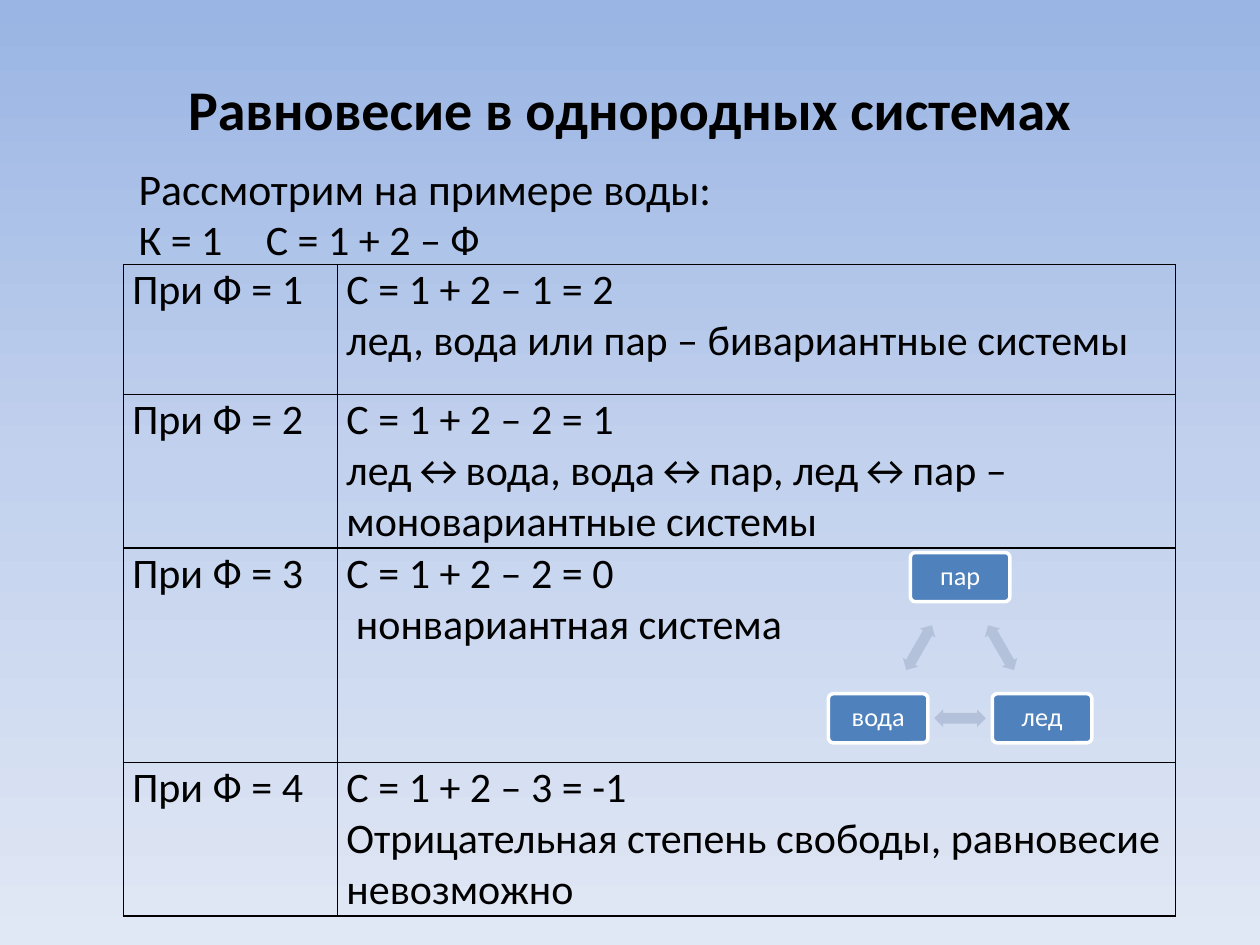
"""Build a slide on phase equilibrium in homogeneous systems, using water."""
import math
from itertools import product

from lxml import etree
from pptx import Presentation
from pptx import util as u
from pptx.dml.color import RGBColor
from pptx.enum import shapes, text
from pptx.oxml import parse_xml
from pptx.oxml.ns import nsdecls, qn

TITLE = "Равновесие в однородных системах"
INTRO = [("Рассмотрим на примере воды:", 25), ("К = 1\tС = 1 + 2 – Ф", 24)]
ROWS = [
    (1.03, "При Ф = 1", "С = 1 + 2 – 1 = 2", "лед, вода или пар – бивариантные системы"),
    (1.22, "При Ф = 2", "С = 1 + 2 – 2 = 1", "лед↔вода, вода↔пар, лед↔пар – моновариантные системы"),
    (1.7, "При Ф = 3", "С = 1 + 2 – 2 = 0", " нонвариантная система"),
    (1.22, "При Ф = 4", "С = 1 + 2 – 3 = -1", "Отрицательная степень свободы, равновесие невозможно"),
]
COLUMNS = [1.7, 6.65]
STATES = [("пар", 7.62, 4.58), ("лед", 8.27, 5.7), ("вода", 6.97, 5.7)]
NODE_SIZE = (0.79, 0.39)
ARROW_SIZE = (0.41, 0.14)
BACKGROUND = [(0, "9AB5E4"), (50, "C2D1ED"), (100, "E1E8F5")]
FONT = "Calibri"
BLACK = RGBColor(0, 0, 0)
WHITE = RGBColor(255, 255, 255)
NODE_BLUE = RGBColor(0x4F, 0x81, 0xBD)
ARROW_BLUE = RGBColor(0xB3, 0xC1, 0xDB)


def place(sp, *box):
    sp.left, sp.top, sp.width, sp.height = map(u.Inches, box)


def add_run(p, words, size, color=BLACK, bold=False):
    r = p.add_run()
    r.text = words
    r.font.name, r.font.size, r.font.bold = FONT, u.Pt(size), bold
    r.font.color.rgb = color


def set_background(s):
    stops = "".join(f'<a:gs pos="{pos * 1000}"><a:srgbClr val="{rgb}"/></a:gs>' for pos, rgb in BACKGROUND)
    bg = parse_xml(
        f'<p:bg {nsdecls("p", "a")}><p:bgPr><a:gradFill rotWithShape="1"><a:gsLst>{stops}</a:gsLst>'
        '<a:lin ang="5400000" scaled="0"/></a:gradFill><a:effectLst/></p:bgPr></p:bg>')
    s.element.cSld.insert(0, bg)


def add_heading(s):
    title, body = s.shapes.title, s.placeholders[1]
    place(title, 0.5, 0.3, 9, 1.11)
    title.text_frame.vertical_anchor = text.MSO_ANCHOR.MIDDLE
    p = title.text_frame.paragraphs[0]
    p.alignment = text.PP_ALIGN.CENTER
    add_run(p, TITLE, 32, bold=True)
    place(body, 0.51, 1.23, 9, 4.92)
    tf = body.text_frame
    for i, (words, size) in enumerate(INTRO):
        p = tf.add_paragraph() if i else tf.paragraphs[0]
        p.space_before = u.Pt(0)
        pPr = p._p.get_or_add_pPr()
        pPr.set("marL", "0")
        pPr.set("indent", str(u.Inches(0.49)))
        etree.SubElement(pPr, qn("a:buNone"))
        tabs = etree.SubElement(pPr, qn("a:tabLst"))
        etree.SubElement(tabs, qn("a:tab"), pos=str(u.Inches(2.52)), algn="l")
        add_run(p, words, size)


def add_centred(group, kind, x, y, size, color, adjustments):
    w, h = size
    sp = group.shapes.add_shape(kind, *map(u.Inches, (x - w / 2, y - h / 2, w, h)))
    sp.shadow.inherit = False
    sp.fill.solid()
    sp.fill.fore_color.rgb = color
    sp.line.fill.background()
    for i, value in enumerate(adjustments):
        sp.adjustments[i] = value
    return sp


def add_cycle(s):
    group = s.shapes.add_group_shape()
    for (name, x, y), (_, x2, y2) in zip(STATES, STATES[1:] + STATES[:1]):
        node = add_centred(group, shapes.MSO_SHAPE.ROUNDED_RECTANGLE, x, y, NODE_SIZE, NODE_BLUE, [0.1])
        node.line.color.rgb = WHITE
        node.line.width = u.Pt(2)
        tf = node.text_frame
        tf.word_wrap = True
        tf.vertical_anchor = text.MSO_ANCHOR.MIDDLE
        tf.margin_left = tf.margin_right = tf.margin_top = tf.margin_bottom = u.Inches(0.06)
        p = tf.paragraphs[0]
        p.alignment, p.line_spacing = text.PP_ALIGN.CENTER, 0.9
        add_run(p, name, 15, WHITE)
        arrow = add_centred(group, shapes.MSO_SHAPE.LEFT_RIGHT_ARROW, (x + x2) / 2, (y + y2) / 2,
                            ARROW_SIZE, ARROW_BLUE, [0.6, 0.5])
        arrow.rotation = round(math.degrees(math.atan2(y2 - y, x2 - x))) % 360


def fill_cell(cell, lines):
    cell.margin_left = cell.margin_right = u.Inches(0.07)
    cell.margin_top = cell.margin_bottom = 0
    tf = cell.text_frame
    for i, words in enumerate(lines):
        p = tf.add_paragraph() if i else tf.paragraphs[0]
        p.alignment = text.PP_ALIGN.LEFT if i else text.PP_ALIGN.JUSTIFY
        add_run(p, words, 24)
    tcPr = cell._tc.get_or_add_tcPr()
    for side in ("lnL", "lnR", "lnT", "lnB"):
        ln = etree.SubElement(tcPr, qn(f"a:{side}"), w=str(u.Pt(1)))
        fill = etree.SubElement(ln, qn("a:solidFill"))
        etree.SubElement(fill, qn("a:srgbClr"), val=str(BLACK))
    cell.fill.background()


def add_cases(s):
    heights = [row[0] for row in ROWS]
    box = map(u.Inches, (0.98, 2.1, sum(COLUMNS), sum(heights)))
    table = s.shapes.add_table(len(ROWS), len(COLUMNS), *box).table
    table.first_row = table.horz_banding = False
    for column, width in zip(table.columns, COLUMNS):
        column.width = u.Inches(width)
    for row, height in zip(table.rows, heights):
        row.height = u.Inches(height)
    for i, j in product(range(len(ROWS)), range(len(COLUMNS))):
        fill_cell(table.cell(i, j), ROWS[i][2:] if j else ROWS[i][1:2])


def main():
    prs = Presentation()
    prs.slide_width, prs.slide_height = u.Inches(10), u.Inches(7.5)
    s = prs.slides.add_slide(prs.slide_layouts[1])
    set_background(s)
    add_heading(s)
    add_cycle(s)
    add_cases(s)
    prs.save("out.pptx")


if __name__ == "__main__":
    main()
